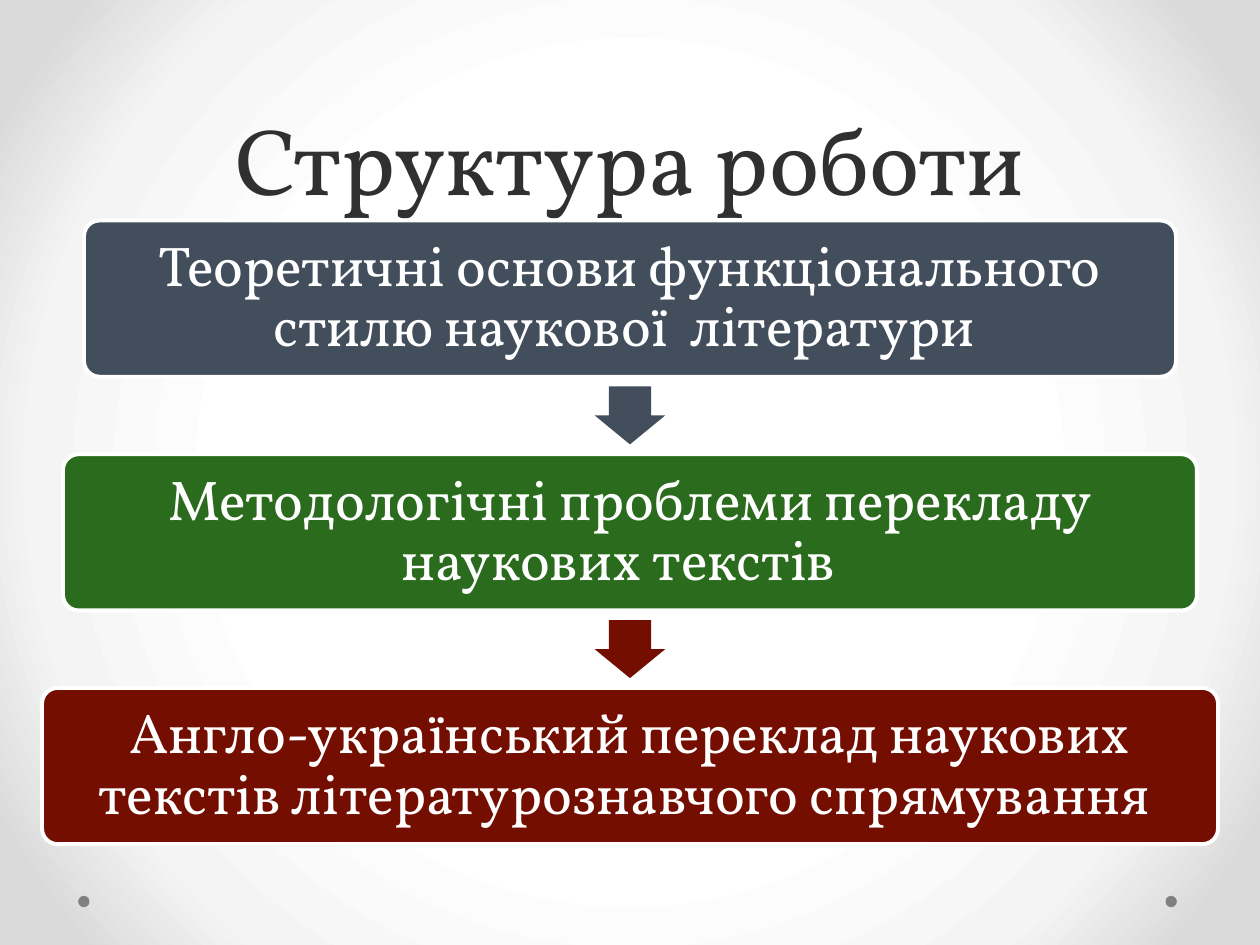
from pptx import Presentation
from pptx.dml.color import RGBColor
from pptx.enum.shapes import MSO_SHAPE
from pptx.enum.text import MSO_ANCHOR, PP_ALIGN
from pptx.oxml import parse_xml
from pptx.oxml.ns import nsdecls, qn
from pptx.util import Inches, Pt

WIDTH, HEIGHT = 10, 7.5
FONT = "Vollkorn"
COLORS = {
    "title": "303030", "white": "FFFFFF", "dot": "808080",
    "slate": "424E5B", "green": "2B6B1D", "red": "730E00",
}
BACKGROUND_STOPS = [(50, "FFFFFF"), (76, "F4F4F4"), (92, "DADADA")]

# Steps: text, colour, share of the slide's width
STEPS = [
    ("Теоретичні основи функціонального стилю наукової  літератури ", "slate", 26 / 30),
    ("Методологічні проблеми перекладу наукових текстів  ", "green", 27 / 30),
    ("Англо-український переклад наукових текстів літературознавчого спрямування ",
     "red", 28 / 30),
]
ARROW_COLORS = ["slate", "red"]
STEPS_TOP, STEPS_BOTTOM, STEP_HEIGHT = 1.75, 6.7, 1.24
STEP_GAP = (STEPS_BOTTOM - STEPS_TOP - len(STEPS) * STEP_HEIGHT) / (len(STEPS) - 1)
ARROW_WIDTH, ARROW_HEIGHT = 0.56, 0.46
DOT_SIZE = 0.09


def color(name):
    return RGBColor.from_string(COLORS[name])


def paint_background(page):
    page.background.fill.gradient()
    gradient = page._element.find(".//" + qn("a:gradFill"))
    stops = "".join(
        f'<a:gs pos="{share * 1000}"><a:srgbClr val="{value}"/></a:gs>'
        for share, value in BACKGROUND_STOPS)
    gradient.getparent().replace(gradient, parse_xml(
        f'<a:gradFill {nsdecls("a")} rotWithShape="1"><a:gsLst>{stops}</a:gsLst>'
        '<a:path path="circle"><a:fillToRect l="50000" t="50000" r="50000" b="50000"/>'
        '</a:path></a:gradFill>'))


def add_figure(page, preset, left, top, width, height, fill):
    figure = page.shapes.add_shape(
        preset, Inches(left), Inches(top), Inches(width), Inches(height))
    figure.shadow.inherit = False
    figure.fill.solid()
    figure.fill.fore_color.rgb = color(fill)
    figure.line.fill.background()
    return figure


def write_text(box, text, size, text_color, spacing, anchor):
    frame = box.text_frame
    frame.word_wrap = True
    frame.vertical_anchor = anchor
    para = frame.paragraphs[0]
    para.alignment = PP_ALIGN.CENTER
    para.line_spacing = spacing
    span = para.add_run()
    span.text = text
    span.font.name = FONT
    span.font.size = Pt(size)
    span.font.color.rgb = color(text_color)


def add_title(page, text):
    box = page.shapes.add_textbox(
        Inches(0.05 * WIDTH), 0, Inches(0.9 * WIDTH), Inches(STEPS_TOP))
    write_text(box, text, 54, "title", Pt(58), MSO_ANCHOR.BOTTOM)


def add_step(page, text, fill, share, top):
    width = share * WIDTH
    box = add_figure(page, MSO_SHAPE.ROUNDED_RECTANGLE,
                     (WIDTH - width) / 2, top, width, STEP_HEIGHT, fill)
    box.adjustments[0] = 0.1
    box.line.color.rgb = color("white")
    box.line.width = Pt(2.25)
    frame = box.text_frame
    frame.margin_left = frame.margin_right = Inches(0.13)
    frame.margin_top = frame.margin_bottom = Inches(0.13)
    write_text(box, text, 32, "white", 0.9, MSO_ANCHOR.MIDDLE)


def add_arrow(page, fill, gap_top):
    arrow = add_figure(page, MSO_SHAPE.DOWN_ARROW, (WIDTH - ARROW_WIDTH) / 2,
                       gap_top + (STEP_GAP - ARROW_HEIGHT) / 2,
                       ARROW_WIDTH, ARROW_HEIGHT, fill)
    arrow.adjustments[0] = 0.6
    arrow.adjustments[1] = 0.5


def main():
    deck = Presentation()
    deck.slide_width, deck.slide_height = Inches(WIDTH), Inches(HEIGHT)
    page = deck.slides.add_slide(deck.slide_layouts[6])
    paint_background(page)

    # Corner dots
    for left in (9.25, 0.62):
        add_figure(page, MSO_SHAPE.OVAL, left, 7.11, DOT_SIZE, DOT_SIZE, "dot")

    add_title(page, "Структура роботи")

    # Chain of steps, with an arrow in each gap
    for row, (text, fill, share) in enumerate(STEPS):
        top = STEPS_TOP + row * (STEP_HEIGHT + STEP_GAP)
        add_step(page, text, fill, share, top)
        if row < len(ARROW_COLORS):
            add_arrow(page, ARROW_COLORS[row], top + STEP_HEIGHT)

    deck.save("out.pptx")


if __name__ == "__main__":
    main()
